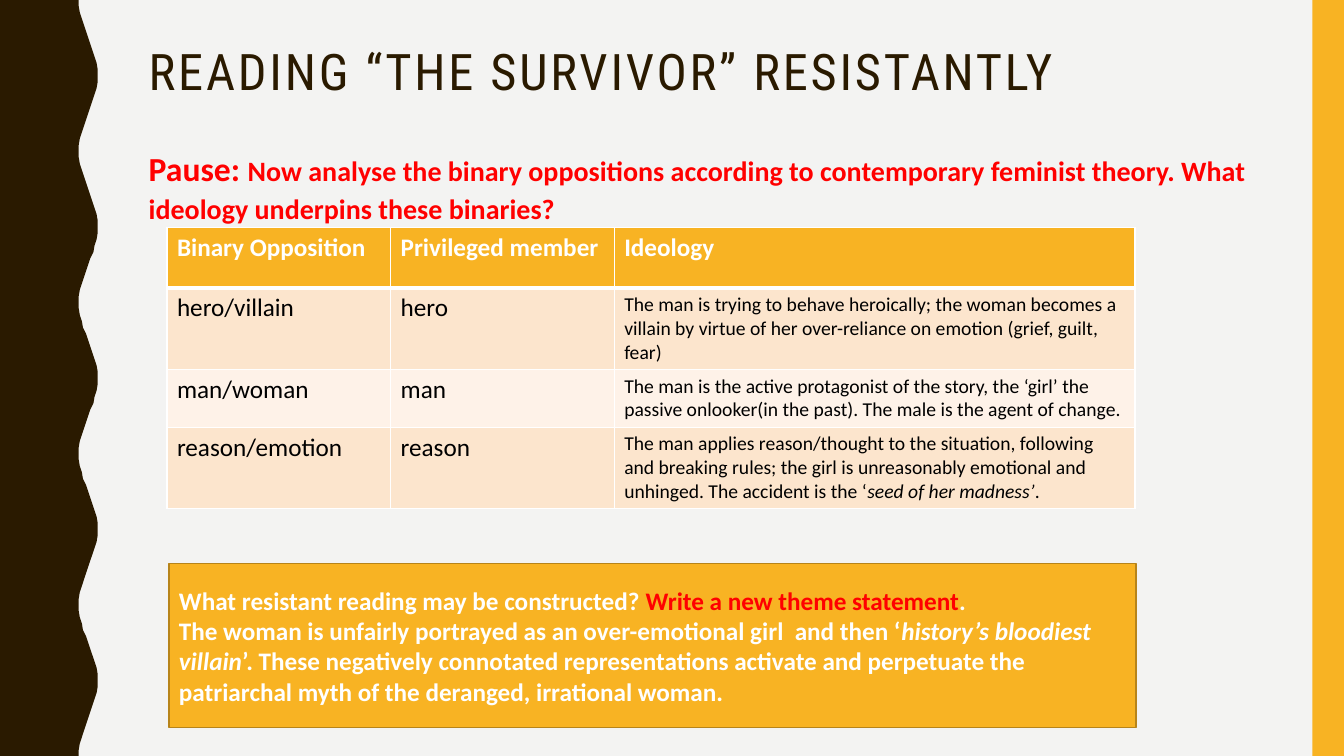
from math import cos, pi

from lxml.etree import SubElement
from pptx import Presentation
from pptx.dml.color import RGBColor
from pptx.enum.shapes import MSO_SHAPE
from pptx.enum.text import MSO_ANCHOR, MSO_AUTO_SIZE, PP_ALIGN
from pptx.oxml.ns import qn
from pptx.util import Pt

PX = 9525
WIDTH, HEIGHT = 1280, 720

PAPER = RGBColor(0xF3, 0xF3, 0xF2)
BROWN = RGBColor(0x2A, 0x1A, 0x00)
AMBER = RGBColor(0xF8, 0xB3, 0x23)
OCHRE = RGBColor(0xB7, 0x84, 0x1A)
PEACH = RGBColor(0xFC, 0xE5, 0xCD)
CREAM = RGBColor(0xFE, 0xF2, 0xE8)
WHITE = RGBColor(0xFF, 0xFF, 0xFF)
BLACK = RGBColor(0x00, 0x00, 0x00)
RED = RGBColor(0xFF, 0x00, 0x00)

TITLE = dict(name="Roboto Condensed", size=Pt(36), bold=False, color=BROWN)
PROMPT = dict(name="Calibri", size=Pt(20), bold=True, color=RED)
PAUSE = PROMPT | dict(size=Pt(24))
HEADER = dict(name="Calibri", size=Pt(18), bold=True, color=WHITE)
MEMBER = HEADER | dict(bold=False, color=BLACK)
IDEOLOGY = MEMBER | dict(size=Pt(14))
ITALIC = dict(italic=True)

COLUMNS = [213, 213, 496]
ROWS = [57, 39, 39, 39]
HEADINGS = ["Binary Opposition", "Privileged member", "Ideology"]
BINARIES = [
    ("hero/villain", "hero", [
        ("The man is trying to behave heroically; the woman becomes a villain "
         "by virtue of her over-reliance on emotion (grief, guilt, fear)", IDEOLOGY)]),
    ("man/woman", "man", [
        ("The man is the active protagonist of the story, the ‘girl’ the passive "
         "onlooker(in the past). The male is the agent of change.", IDEOLOGY)]),
    ("reason/emotion", "reason", [
        ("The man applies reason/thought to the situation, following and breaking "
         "rules; the girl is unreasonably emotional and unhinged. "
         "The accident is the ‘", IDEOLOGY),
        ("seed of her madness’", IDEOLOGY | ITALIC),
        (".", IDEOLOGY)]),
]
RESISTANT_READING = [
    [("What resistant reading may be constructed? ", HEADER),
     ("Write a new theme statement", HEADER | dict(color=RED)),
     (".", HEADER)],
    [("The woman is unfairly portrayed as an over-emotional girl  and then ‘", HEADER),
     ("history’s bloodiest villain", HEADER | ITALIC),
     ("’. These negatively connotated representations activate and perpetuate "
      "the patriarchal myth of the deranged, irrational woman.", HEADER)],
]


def px(*lengths):
    return [n * PX for n in lengths]


def set_attrs(obj, formats):
    for key, value in formats.items():
        setattr(obj, key, value)


def add_runs(p, runs):
    for text, formats in runs:
        r = p.add_run()
        r.text = text
        font = dict(formats)
        r.font.color.rgb = font.pop("color")
        set_attrs(r.font, font)


def paint(sp, fill, line=None):
    sp.shadow.inherit = False
    sp.fill.solid()
    sp.fill.fore_color.rgb = fill
    if line is None:
        sp.line.fill.background()
    else:
        sp.line.color.rgb = line
        sp.line.width = Pt(1)


def add_wave(s):
    edge = [(84 - 9 * cos(2 * pi * y / 144), y) for y in range(0, HEIGHT + 1, 6)]
    builder = s.shapes.build_freeform(0, 0, scale=PX)
    builder.add_line_segments(edge + [(0, HEIGHT)], close=True)
    paint(builder.convert_to_shape(), BROWN)


def add_rect(s, box, fill, line=None):
    sp = s.shapes.add_shape(MSO_SHAPE.RECTANGLE, *px(*box))
    paint(sp, fill, line)
    return sp


def fill_placeholder(sp, box, runs, paragraph):
    left, top, width, height = px(*box)
    set_attrs(sp, dict(left=left, top=top, width=width, height=height))
    tf = sp.text_frame
    set_attrs(tf, dict(word_wrap=True, auto_size=MSO_AUTO_SIZE.NONE,
                       vertical_anchor=MSO_ANCHOR.TOP))
    p = tf.paragraphs[0]
    set_attrs(p, dict(alignment=PP_ALIGN.LEFT) | paragraph)
    add_runs(p, runs)
    return p


def add_title(s):
    p = fill_placeholder(s.shapes.title, (132, 40, 1068, 156),
                         [("READING “THE SURVIVOR” RESISTANTLY", TITLE)],
                         dict(line_spacing=0.9, space_before=Pt(0)))
    p.runs[0].font._element.set("spc", "200")


def add_prompt(s):
    p = fill_placeholder(
        s.placeholders[1], (132, 132, 1068, 377),
        [("Pause: ", PAUSE),
         ("Now analyse the binary oppositions according to contemporary feminist "
          "theory. What ideology underpins these binaries?", PROMPT)],
        dict(line_spacing=1.1, space_before=Pt(7)))
    pPr = p._p.get_or_add_pPr()
    pPr.set("marL", "0")
    pPr.set("indent", "0")
    SubElement(pPr, qn("a:buNone"))


def add_border(cell, side, width):
    tcPr = cell._tc.get_or_add_tcPr()
    ln = SubElement(tcPr, qn(f"a:ln{side}"), w=str(Pt(width)))
    color = SubElement(SubElement(ln, qn("a:solidFill")), qn("a:srgbClr"))
    color.set("val", str(WHITE))


def fill_cell(cell, runs, fill, top, bottom):
    for side, width in zip("LRTB", (1, 1, top, bottom)):
        add_border(cell, side, width)
    cell.fill.solid()
    cell.fill.fore_color.rgb = fill
    add_runs(cell.text_frame.paragraphs[0], runs)


def add_binaries(s):
    box = px(159, 217, sum(COLUMNS), sum(ROWS))
    table = s.shapes.add_table(len(ROWS), len(COLUMNS), *box).table
    for column, width in zip(table.columns, px(*COLUMNS)):
        column.width = width
    for row, height in zip(table.rows, px(*ROWS)):
        row.height = height
    content = [[[(text, HEADER)] for text in HEADINGS]]
    content += [[[(pair, MEMBER)], [(member, MEMBER)], ideology]
                for pair, member, ideology in BINARIES]
    for i, row in enumerate(content):
        fill = AMBER if i == 0 else (CREAM, PEACH)[i % 2]
        top, bottom = 3 if i == 1 else 1, 3 if i == 0 else 1
        for j, runs in enumerate(row):
            fill_cell(table.cell(i, j), runs, fill, top, bottom)


def add_reading(s):
    tf = add_rect(s, (161, 537, 921, 156), AMBER, OCHRE).text_frame
    set_attrs(tf, dict(word_wrap=True, vertical_anchor=MSO_ANCHOR.MIDDLE))
    for i, runs in enumerate(RESISTANT_READING):
        p = tf.add_paragraph() if i else tf.paragraphs[0]
        p.alignment = PP_ALIGN.LEFT
        add_runs(p, runs)


def main():
    prs = Presentation()
    prs.slide_width, prs.slide_height = px(WIDTH, HEIGHT)
    s = prs.slides.add_slide(prs.slide_layouts[1])
    s.background.fill.solid()
    s.background.fill.fore_color.rgb = PAPER
    add_wave(s)
    add_rect(s, (1250, 0, 30, HEIGHT), AMBER)
    add_title(s)
    add_prompt(s)
    add_binaries(s)
    add_reading(s)
    prs.save("out.pptx")


if __name__ == "__main__":
    main()
